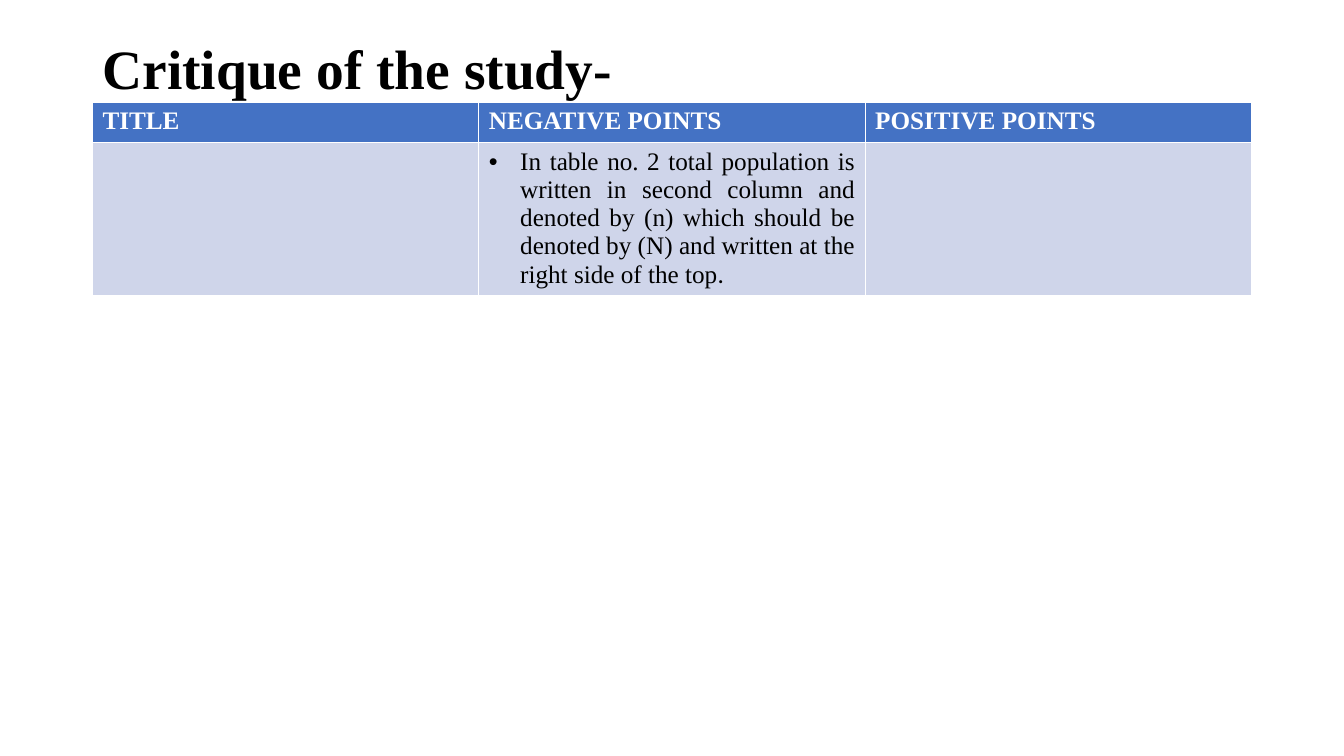
from lxml.etree import SubElement
from pptx import Presentation
from pptx.dml.color import RGBColor
from pptx.enum.text import MSO_ANCHOR, MSO_AUTO_SIZE, PP_ALIGN
from pptx.oxml.ns import qn
from pptx.util import Cm, Pt

TITLE = "Critique of the study-"
HEADINGS = ["TITLE", "NEGATIVE POINTS", "POSITIVE POINTS"]
NEGATIVE_POINT = [
    ("In table no. 2 total population is written in second column and denoted "
     "by (n) which should be denoted by (N) and written at the right side of "
     "the top", "Times New Roman"),
    (".", "Calibri"),
]

BLACK = RGBColor(0x00, 0x00, 0x00)
WHITE = RGBColor(0xFF, 0xFF, 0xFF)
HEADING_BLUE = RGBColor(0x44, 0x72, 0xC4)
BODY_BLUE = RGBColor(0xCF, 0xD5, 0xEA)

LEFT, WIDTH = Cm(2.33), Cm(29.21)
TITLE_TOP, TITLE_HEIGHT = Cm(1.02), Cm(1.55)
ROW_HEIGHT = Cm(1.03)
BULLET_INDENT = Cm(0.79)

TITLE_FONT = {"name": "Times New Roman", "size": Pt(39.6), "bold": True}
HEADING_FONT = {"name": "Times New Roman", "size": Pt(18), "bold": True}
BODY_FONT = {"size": Pt(18), "bold": False}


def add_text(paragraph, text, color, font_format):
    run = paragraph.add_run()
    run.text = text
    for attribute, value in font_format.items():
        setattr(run.font, attribute, value)
    run.font.color.rgb = color


def add_bullet(paragraph):
    properties = paragraph._p.get_or_add_pPr()
    properties.set("marL", str(BULLET_INDENT))
    properties.set("indent", str(-BULLET_INDENT))
    SubElement(properties, qn("a:buFont"), typeface="Arial")
    SubElement(properties, qn("a:buChar"), char="•")


def main():
    deck = Presentation()
    deck.slide_width, deck.slide_height = Cm(33.87), Cm(19.05)
    slide = deck.slides.add_slide(deck.slide_layouts[5])

    title = slide.shapes.title
    title.left, title.top = LEFT, TITLE_TOP
    title.width, title.height = WIDTH, TITLE_HEIGHT
    title_frame = title.text_frame
    title_frame.auto_size = MSO_AUTO_SIZE.NONE
    title_frame.vertical_anchor = MSO_ANCHOR.MIDDLE
    title_line = title_frame.paragraphs[0]
    title_line.alignment = PP_ALIGN.LEFT
    title_line.line_spacing = 0.9
    add_text(title_line, TITLE, BLACK, TITLE_FONT)

    critique = slide.shapes.add_table(
        2, len(HEADINGS), LEFT, TITLE_TOP + TITLE_HEIGHT, WIDTH, 2 * ROW_HEIGHT
    ).table
    for column, heading in enumerate(HEADINGS):
        heading_cell, body_cell = critique.cell(0, column), critique.cell(1, column)
        for cell, color in ((heading_cell, HEADING_BLUE), (body_cell, BODY_BLUE)):
            cell.fill.solid()
            cell.fill.fore_color.rgb = color
        add_text(heading_cell.text_frame.paragraphs[0], heading, WHITE, HEADING_FONT)

    negative = critique.cell(1, 1).text_frame.paragraphs[0]
    negative.alignment = PP_ALIGN.JUSTIFY
    add_bullet(negative)
    for text, font_name in NEGATIVE_POINT:
        add_text(negative, text, BLACK, {"name": font_name, **BODY_FONT})

    deck.save("out.pptx")


if __name__ == "__main__":
    main()
